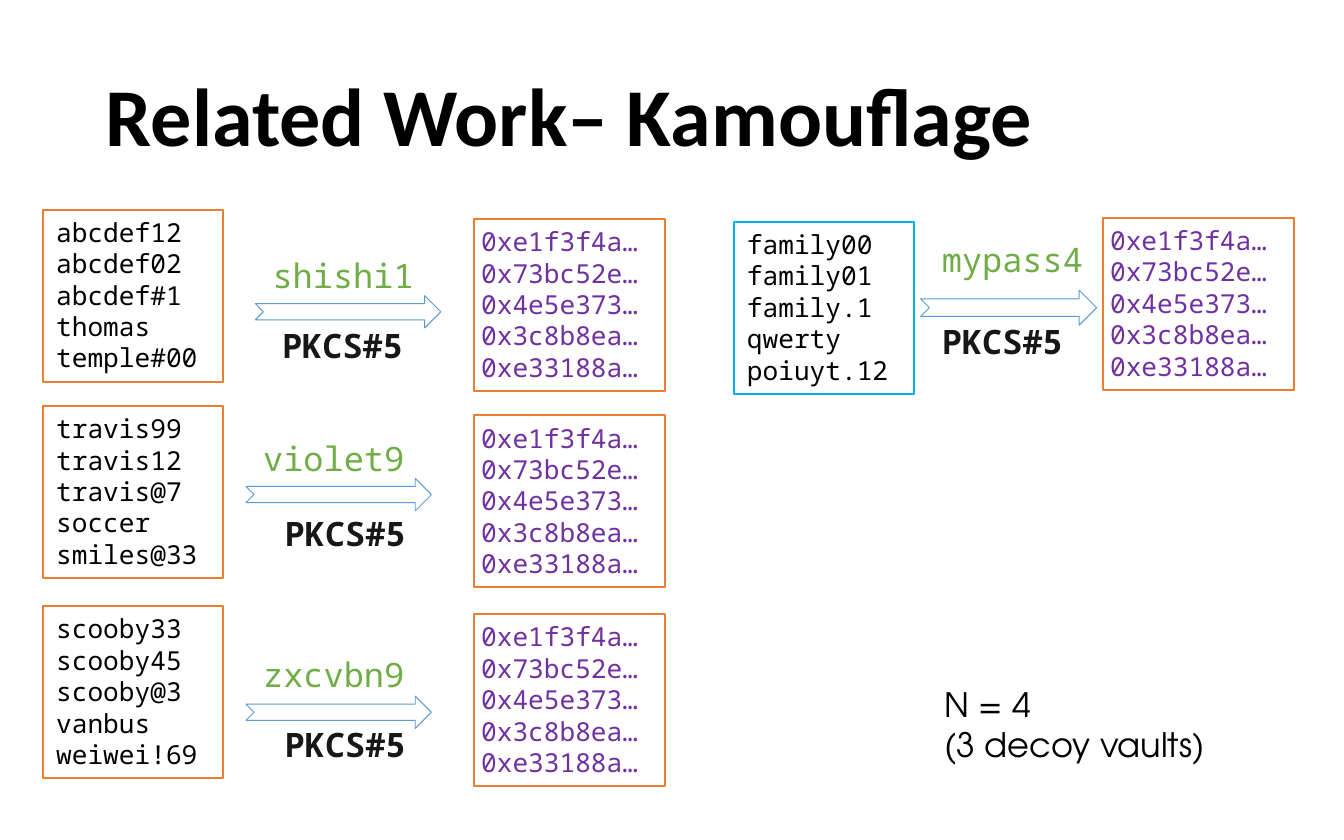
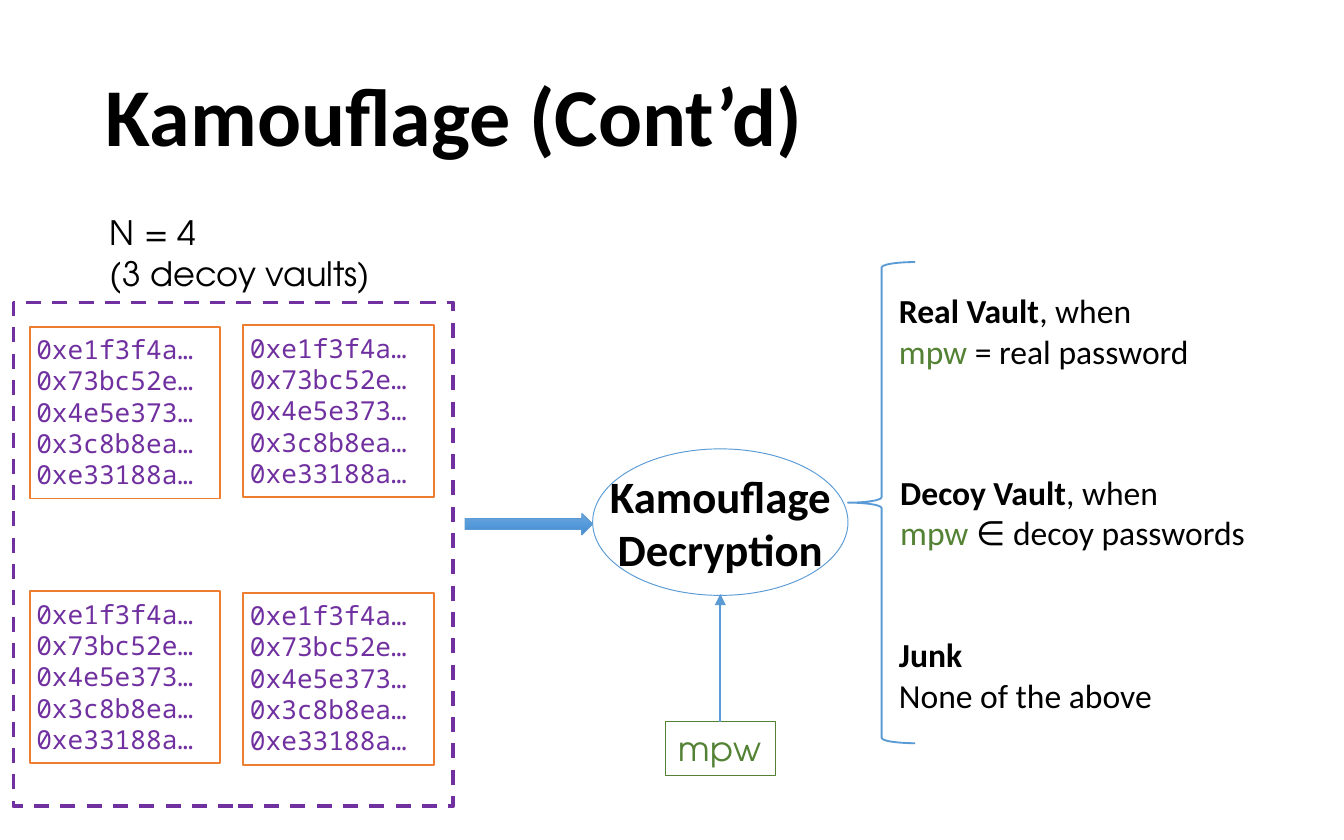
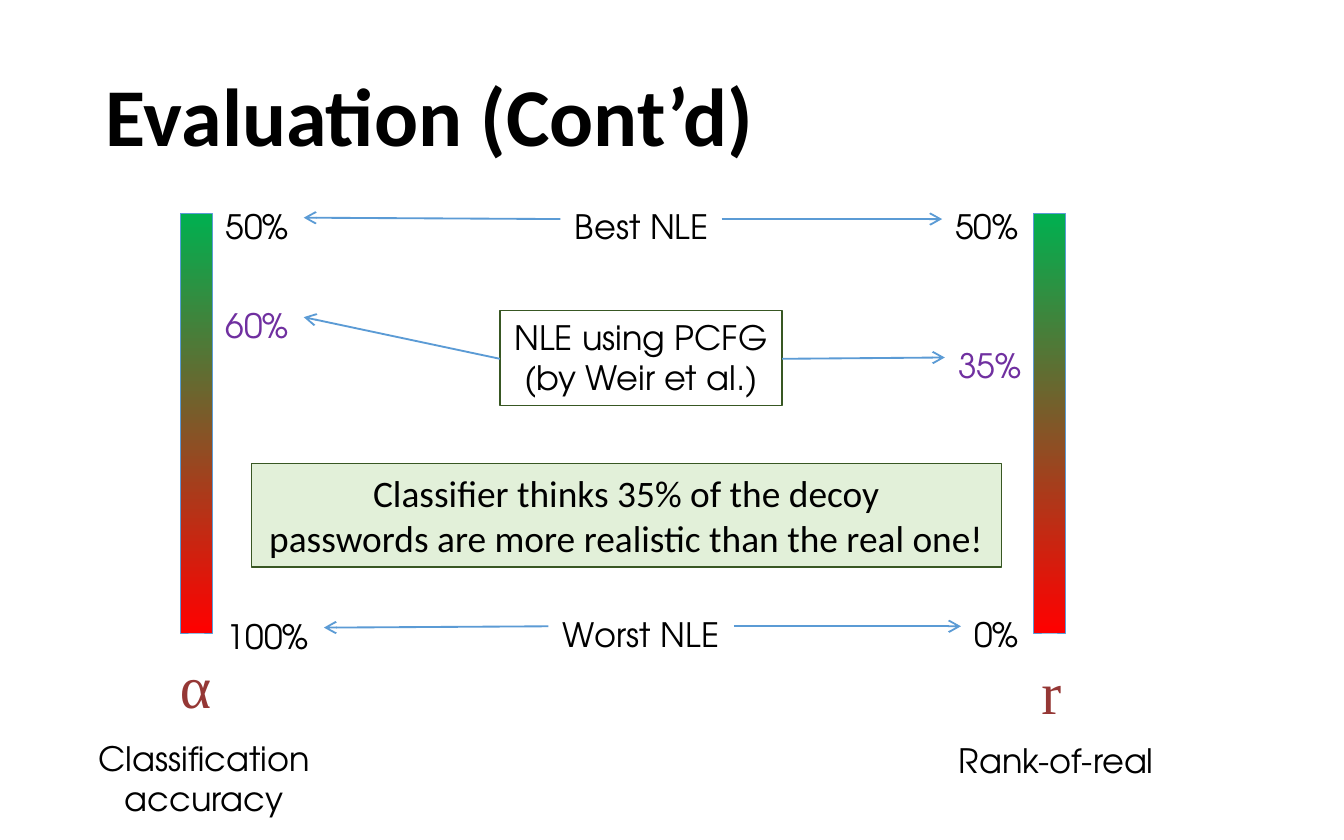
from copy import deepcopy
from dataclasses import dataclass

from lxml import etree
from pptx import Presentation
from pptx.dml.color import RGBColor
from pptx.enum.dml import MSO_LINE
from pptx.enum.shapes import MSO_CONNECTOR, MSO_SHAPE
from pptx.enum.text import MSO_ANCHOR, MSO_AUTO_SIZE, PP_ALIGN
from pptx.oxml.ns import qn
from pptx.util import Inches, Pt

RECT, OVAL = MSO_SHAPE.RECTANGLE, MSO_SHAPE.OVAL
NOTCHED, ARROW = MSO_SHAPE.NOTCHED_RIGHT_ARROW, MSO_SHAPE.RIGHT_ARROW
BRACE = MSO_SHAPE.LEFT_BRACE
STRAIGHT, DASH = MSO_CONNECTOR.STRAIGHT, MSO_LINE.DASH
LEFT, CENTER = PP_ALIGN.LEFT, PP_ALIGN.CENTER
TOP, MIDDLE = MSO_ANCHOR.TOP, MSO_ANCHOR.MIDDLE
GROW, FIXED = MSO_AUTO_SIZE.SHAPE_TO_FIT_TEXT, MSO_AUTO_SIZE.NONE


@dataclass(frozen=True)
class Theme:
    # Colours
    black: str = "000000"
    ink: str = "181717"
    white: str = "FFFFFF"
    orange: str = "ED7D31"
    sky: str = "00B0F0"
    blue: str = "5B9BD5"
    purple: str = "7030A0"
    lime: str = "70AD47"
    green: str = "548235"
    forest: str = "385723"
    mint: str = "E2F0D9"
    brick: str = "953735"
    scale: tuple = ("00B050", "FF0000")
    flow: tuple = ("71A6DB", "559BDB", "448ACA")
    # Fonts
    sans: str = "Calibri"
    mono: str = "Noto Sans Mono"
    geo: str = "TeX Gyre Adventor"
    serif: str = "Times New Roman"
    # Type sizes
    title: int = 44
    symbol: int = 32
    large: int = 24
    note: int = 20
    body: int = 18
    code: int = 14


T = Theme()
PAD = (0.1, 0.05, 0.1, 0.05)
CIPHER = ("0xe1f3f4a…", "0x73bc52e…", "0x4e5e373…", "0x3c8b8ea…", "0xe33188a…")
COUNT = ("N = 4", "(3 decoy vaults)")


def rgb(color):
    return RGBColor.from_string(color)


class Deck:
    def __init__(self):
        self.prs = Presentation()
        self.prs.slide_width = Inches(10)
        self.prs.slide_height = Inches(6.25)
        self.slide = None

    def page(self, title):
        self.slide = self.prs.slides.add_slide(self.prs.slide_layouts[6])
        box = self.text((0.69, 0.29, 8.62, 1.21), [title], T.title, T.sans,
                        bold=True, wrap=True, anchor=MIDDLE, fit=FIXED)
        box.text_frame.paragraphs[0].line_spacing = 0.9

    def label(self, shape, lines, size=T.body, font=T.geo, color=T.black, bold=False,
              align=LEFT, wrap=False, anchor=TOP, pad=PAD, fit=GROW):
        """Fill a shape; a line is a string or a list of (text, bold, color)."""
        frame = shape.text_frame
        frame.word_wrap, frame.vertical_anchor, frame.auto_size = wrap, anchor, fit
        (frame.margin_left, frame.margin_top,
         frame.margin_right, frame.margin_bottom) = map(Inches, pad)
        for i, line in enumerate(lines):
            para = frame.add_paragraph() if i else frame.paragraphs[0]
            para.alignment = align
            para.font.size, para.font.name = Pt(size), font
            if isinstance(line, str):
                para.add_run().text = line
                para.font.bold = bold
                para.font.color.rgb = rgb(color)
                continue
            for words, strong, tint in line:
                run = para.add_run()
                run.text = words
                run.font.bold = strong
                run.font.color.rgb = rgb(tint)
        return shape

    def text(self, at, lines, *args, **style):
        box = self.slide.shapes.add_textbox(*map(Inches, at))
        return self.label(box, lines, *args, **style)

    def shape(self, kind, at, line, width=1, fill=None, dash=None):
        shape = self.slide.shapes.add_shape(kind, *map(Inches, at))
        shape.shadow.inherit = False
        shape.line.color.rgb = rgb(line)
        shape.line.width = Pt(width)
        if dash:
            shape.line.dash_style = dash
        if fill is None:
            shape.fill.background()
        elif isinstance(fill, str):
            shape.fill.solid()
            shape.fill.fore_color.rgb = rgb(fill)
        else:
            self.blend(shape, fill)
        return shape

    def blend(self, shape, colors):
        """Top-to-bottom gradient with evenly spaced stops."""
        shape.fill.gradient()
        shape.fill.gradient_angle = 270
        stops = next(shape._element.spPr.iter(qn("a:gsLst")))
        while len(stops) < len(colors):
            stops.append(deepcopy(stops[0]))
        for i, stop in enumerate(shape.fill.gradient_stops):
            stop.position = i / (len(colors) - 1)
            stop.color.rgb = rgb(colors[i])

    def link(self, start, end, head):
        link = self.slide.shapes.add_connector(STRAIGHT, *map(Inches, start + end))
        link.line.color.rgb = rgb(T.blue)
        link.line.width = Pt(1)
        props = link._element.spPr
        etree.SubElement(props.find(qn("a:ln")), qn("a:tailEnd"), type=head)
        etree.SubElement(props, qn("a:effectLst"))

    def vault(self, x, y, words, line):
        box = self.shape(RECT, (x, y, 1.34, 1.28), line, fill=T.white)
        self.label(box, words, T.code, T.mono, wrap=True)

    def cipher(self, x, y):
        box = self.shape(RECT, (x, y, 1.42, 1.28), T.orange, fill=T.white)
        self.label(box, CIPHER, T.code, T.mono, T.purple, wrap=True,
                   pad=(0.05, 0.05, 0, 0.05))


def vaults(deck):
    deck.page("Related Work– Kamouflage")
    # Plain vault, line colour, master password, then the places of
    # vault, password, arrow, method and cipher
    rows = (
        (("abcdef12", "abcdef02", "abcdef#1", "thomas", "temple#00"), T.orange, "shishi1",
         (0.32, 1.56), (1.93, 1.85), (1.9, 2.2, 1.38, 0.24), (2, 2.37), (3.53, 1.63)),
        (("travis99", "travis12", "travis@7", "soccer", "smiles@33"), T.orange, "violet9",
         (0.32, 3.02), (1.86, 3.21), (1.83, 3.56, 1.38, 0.24), (2.02, 3.77), (3.53, 3.09)),
        (("scooby33", "scooby45", "scooby@3", "vanbus", "weiwei!69"), T.orange, "zxcvbn9",
         (0.32, 4.51), (1.86, 4.82), (1.83, 5.18, 1.38, 0.24), (2.02, 5.34), (3.53, 4.57)),
        (("family00", "family01", "family.1", "qwerty", "poiuyt.12"), T.sky, "mypass4",
         (5.46, 1.65), (6.91, 1.73), (6.85, 2.16, 1.31, 0.26), (6.91, 2.34), (8.21, 1.62)),
    )
    for words, line, key, plain, above, arrow, below, coded in rows:
        deck.vault(*plain, words, line)
        deck.cipher(*coded)
        deck.text((*above, 1.26, 0.4), [key], T.body, T.mono, T.lime)
        deck.shape(NOTCHED, arrow, T.blue, 0.5)
        deck.text((*below, 1.11, 0.4), ["PKCS#5"], T.body, T.mono, T.ink, bold=True)
    deck.text((6.93, 5.04, 2.17, 0.71), COUNT)


def decrypt(deck):
    deck.page("Kamouflage (Cont’d)")
    # Stored vaults
    deck.text((0.72, 1.53, 2.17, 0.71), COUNT)
    for x, y in ((0.22, 2.43), (1.81, 2.42), (0.22, 4.4), (1.81, 4.41)):
        deck.cipher(x, y)
    deck.shape(RECT, (0.1, 2.25, 3.27, 3.75), T.purple, 2, dash=DASH)

    # Decryption and its inputs
    oval = deck.shape(OVAL, (4.41, 3.34, 1.9, 1.09), T.blue, 0.5)
    deck.label(oval, ("Kamouflage", "Decryption"), T.large, T.sans, bold=True,
               align=CENTER, anchor=MIDDLE, pad=(0, 0, 0, 0), fit=FIXED)
    deck.shape(ARROW, (3.46, 3.82, 0.95, 0.16), T.blue, 0.5, T.flow)
    box = deck.shape(RECT, (4.95, 5.37, 0.82, 0.4), T.green, 0.75)
    deck.label(box, ["mpw"], color=T.green)
    deck.link((5.36, 5.37), (5.36, 4.42), "triangle")

    # Outcomes
    brace = deck.shape(BRACE, (6.31, 1.95, 0.5, 3.58), T.blue)
    brace.adjustments[0], brace.adjustments[1] = 0.08, 0.5
    cases = (
        ((6.59, 2.11, 2.39, 0.71), "Real Vault", "= real password"),
        ((6.6, 3.46, 2.77, 0.71), "Decoy Vault", "∈ decoy passwords"),
    )
    for at, name, rule in cases:
        deck.text(at, ([(name, True, T.black), (", when", False, T.black)],
                       [("mpw ", False, T.green), (rule, False, T.black)]), font=T.sans)
    deck.text((6.59, 4.67, 2.11, 0.71), ([("Junk", True, T.black)], "None of the above"),
              font=T.sans)


def scales(deck):
    deck.page("Evaluation (Cont’d)")
    # Scales and their names
    for x in (1.34, 7.69):
        deck.shape(RECT, (x, 1.59, 0.24, 3.12), T.blue, 0.5, T.scale)
    for at, sign in (((1.24, 4.78, 0.46, 0.64), "α"), ((7.65, 4.82, 0.39, 0.64), "r")):
        deck.text(at, [sign], T.symbol, T.serif, T.brick)
    deck.text((0.57, 5.44, 1.9, 0.71), ["Classification accuracy"], align=CENTER, wrap=True)
    deck.text((6.91, 5.46, 1.9, 0.4), ["Rank-of-real"], align=CENTER, wrap=True)

    # Marks on the scales
    marks = (
        (1.58, 1.48, 0.68, "50%", T.black), (1.58, 2.22, 0.68, "60%", T.purple),
        (1.59, 4.53, 0.82, "100%", T.black), (7.01, 1.48, 0.68, "50%", T.black),
        (7.03, 2.52, 0.68, "35%", T.purple), (7.15, 4.52, 0.54, "0%", T.black),
    )
    for x, y, w, mark, color in marks:
        deck.text((x, y, w, 0.29), [mark], color=color)

    # Encoders and arrows to both scales
    deck.text((4.17, 1.48, 1.21, 0.29), ["Best NLE"], align=CENTER)
    deck.text((4.08, 4.52, 1.38, 0.29), ["Worst NLE"], align=CENTER)
    box = deck.shape(RECT, (3.72, 2.31, 2.1, 0.71), T.forest, 0.75)
    deck.label(box, ("NLE using PCFG", "(by Weir et al.)"), align=CENTER)
    links = (
        ((4.17, 1.63), (2.26, 1.62)), ((5.37, 1.63), (7.01, 1.63)),
        ((3.72, 2.67), (2.26, 2.36)), ((5.82, 2.67), (7.03, 2.66)),
        ((4.08, 4.66), (2.41, 4.67)), ((5.46, 4.66), (7.15, 4.66)),
    )
    for start, end in links:
        deck.link(start, end, "arrow")

    # Finding
    box = deck.shape(RECT, (1.87, 3.45, 5.58, 0.77), T.forest, 0.75, T.mint)
    deck.label(box, ("Classifier thinks 35% of the decoy",
                     "passwords are more realistic than the real one!"),
               T.note, T.sans, align=CENTER)


def main():
    deck = Deck()
    for build in (vaults, decrypt, scales):
        build(deck)
    deck.prs.save("out.pptx")


if __name__ == "__main__":
    main()
